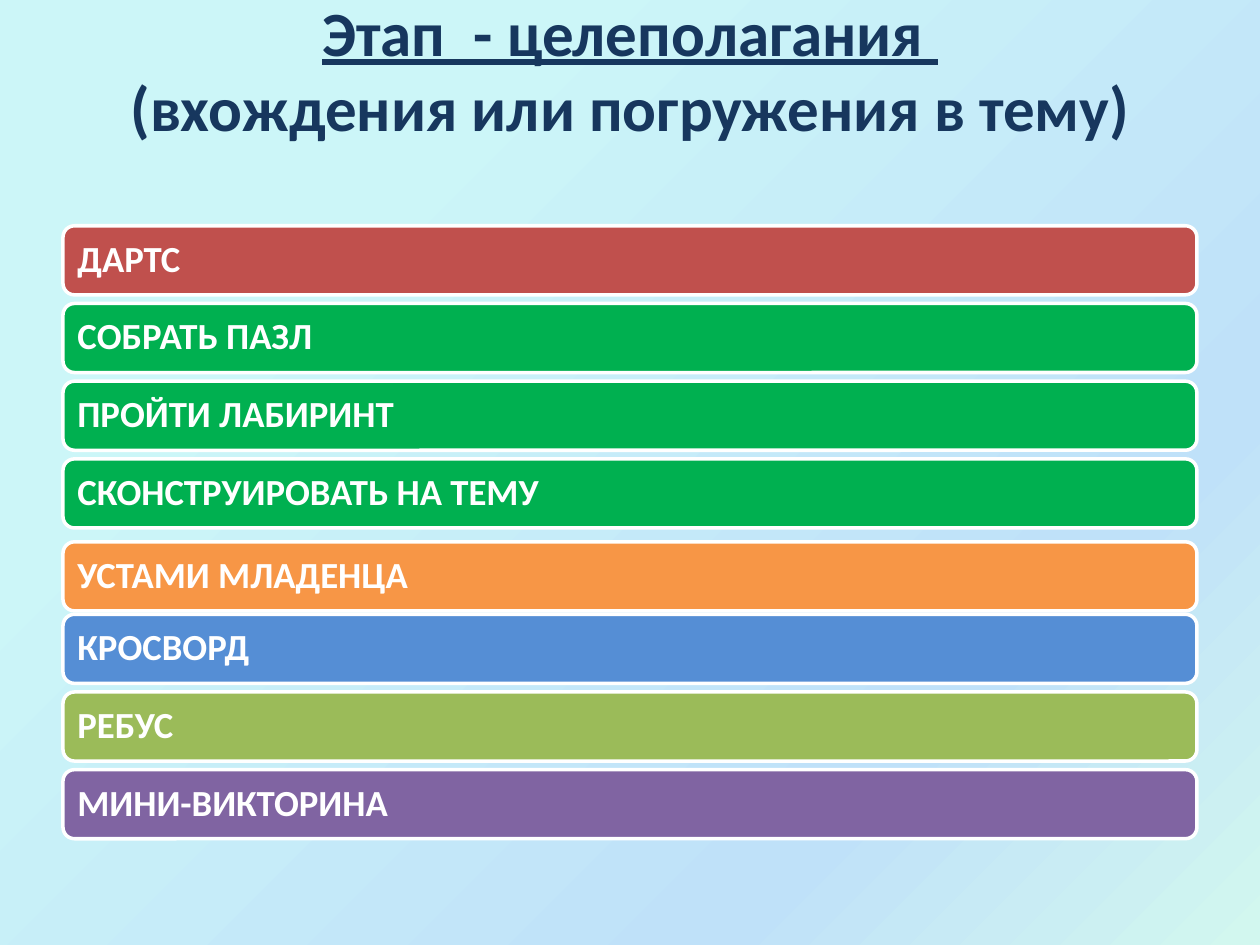
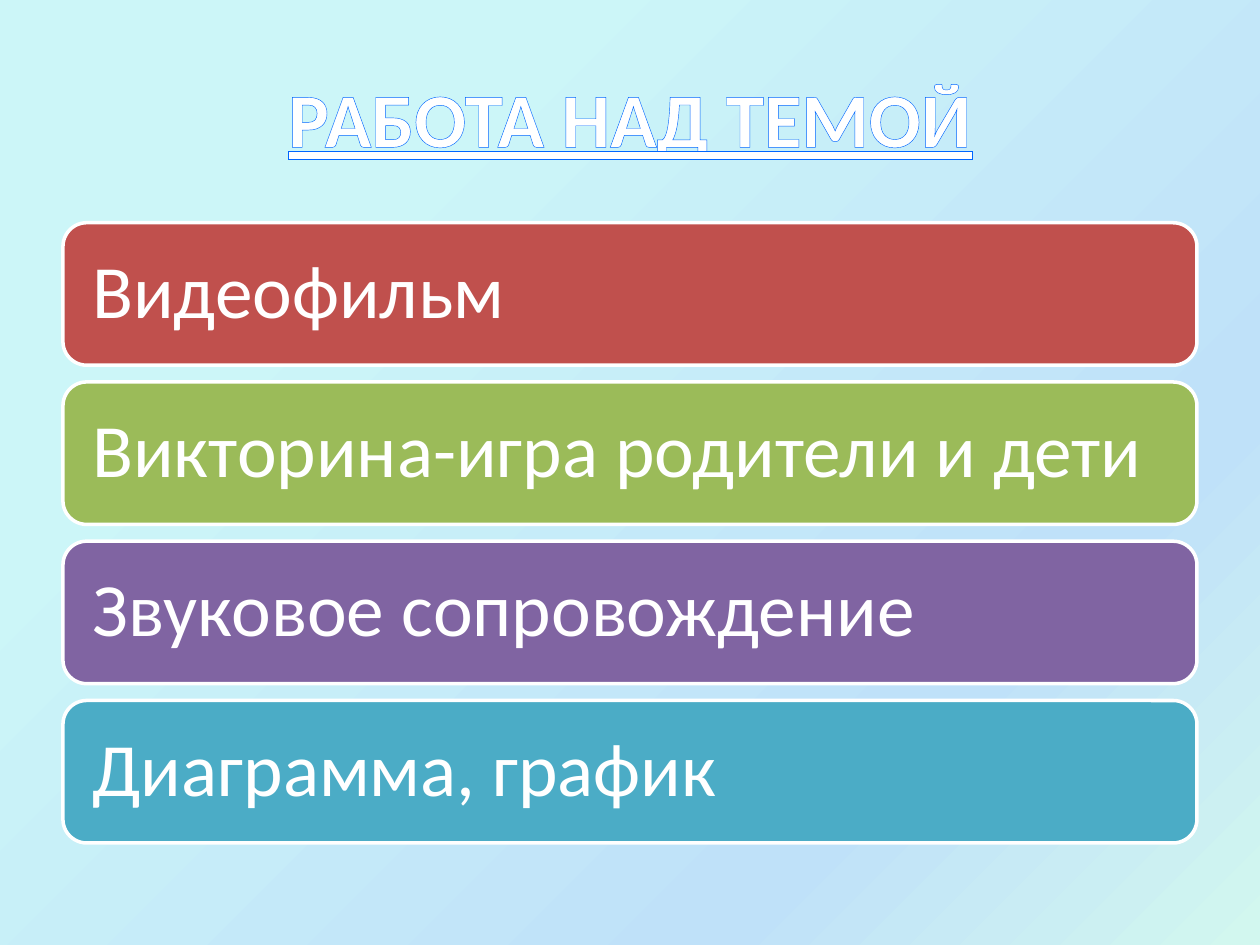
import lxml.etree
import pptx
import pptx.dml.color
import pptx.enum.shapes
import pptx.enum.text
import pptx.oxml.ns
import pptx.util

Pt = pptx.util.Pt
qn = pptx.oxml.ns.qn
MIDDLE = pptx.enum.text.MSO_ANCHOR.MIDDLE
ALIGN = pptx.enum.text.PP_ALIGN

WHITE, NAVY, PALE, AZURE = "FFFFFF", "17375E", "DCE6F2", "0066FF"
RED, GREEN, ORANGE, BLUE = "C0504D", "00B050", "F79646", "558ED5"
OLIVE, PURPLE, TEAL = "9BBB59", "8064A2", "4BACC6"
BACKDROP = [(25, "CCF6F8"), (75, "BFE1F9"), (100, "D2F7EF")]


def rgb(value):
    return pptx.dml.color.RGBColor.from_string(value)


def set_all(obj, values):
    for name, value in values.items():
        setattr(obj, name, value)


def add_solid_fill(parent, color):
    fill = lxml.etree.SubElement(parent, qn("a:solidFill"))
    lxml.etree.SubElement(fill, qn("a:srgbClr"), val=color)


class Deck:
    """Holds the shared style and the slide being filled."""

    font = "Calibri"
    left, width = 36, 648

    def __init__(self):
        self.prs = pptx.Presentation()
        self.prs.slide_width, self.prs.slide_height = Pt(720), Pt(540)
        self.s = None
        self.paint_master()

    def paint_master(self):
        """Give every slide the diagonal gradient."""
        master = self.prs.slide_master
        fill = master.background.fill
        fill.gradient()
        fill.gradient_angle = 315
        stops = next(master.element.iter(qn("a:gsLst")))
        for stop in list(stops):
            stops.remove(stop)
        for pos, color in BACKDROP:
            stop = lxml.etree.SubElement(stops, qn("a:gs"), pos=str(pos * 1000))
            lxml.etree.SubElement(stop, qn("a:srgbClr"), val=color)

    def slide(self):
        self.s = self.prs.slides.add_slide(self.prs.slide_layouts[6])

    def run(self, p, text, size, color, **style):
        r = p.add_run()
        r.text = text
        set_all(r.font, {"name": self.font, "size": Pt(size), **style})
        r.font.color.rgb = rgb(color)
        return r

    def title(self, lines, top, height, size, color, outline):
        """Centre the lines in one paragraph, underlining the first."""
        sp = self.s.shapes.add_textbox(Pt(self.left), Pt(top), Pt(self.width), Pt(height))
        tf = sp.text_frame
        set_all(tf, {"word_wrap": True, "vertical_anchor": MIDDLE})
        p = tf.paragraphs[0]
        p.alignment = ALIGN.CENTER
        for i, line in enumerate(lines):
            if i:
                p.add_line_break()
            r = self.run(p, line, size, color, bold=True, underline=i == 0)
            ln = lxml.etree.Element(qn("a:ln"), w=str(Pt(1.45)))
            add_solid_fill(ln, outline)
            r.font.fill  # the run properties exist from here on
            r._r.get_or_add_rPr().insert(0, ln)

    def bar(self, text, color, top, height, size, bold):
        sp = self.s.shapes.add_shape(
            pptx.enum.shapes.MSO_SHAPE.ROUNDED_RECTANGLE,
            Pt(self.left), Pt(top), Pt(self.width), Pt(height))
        sp.shadow.inherit = False
        sp.fill.solid()
        sp.fill.fore_color.rgb = rgb(color)
        sp.line.color.rgb = rgb(WHITE)
        sp.line.width = Pt(2)
        tf = sp.text_frame
        set_all(tf, {"word_wrap": True, "vertical_anchor": MIDDLE})
        for side in ("left", "top", "right", "bottom"):
            setattr(tf, f"margin_{side}", Pt(size * 0.3))
        p = tf.paragraphs[0]
        set_all(p, {"alignment": ALIGN.LEFT, "line_spacing": 0.9})
        self.run(p, text, size, WHITE, bold=bold)

    def bars(self, items, top, pitch, height, size, bold=False, shifts=None):
        """Stack bars at an even pitch; shifts moves single bars down by index."""
        for i, (text, color) in enumerate(items):
            y = top + i * pitch + (shifts or {}).get(i, 0)
            self.bar(text, color, y, height, size, bold)


def main():
    deck = Deck()

    deck.slide()
    deck.title(["Этап  - целеполагания ", "(вхождения или погружения в тему)"],
               0, 78.5, 36, NAVY, PALE)
    deck.bars([
        ("ДАРТС", RED),
        ("СОБРАТЬ ПАЗЛ", GREEN),
        ("ПРОЙТИ ЛАБИРИНТ", GREEN),
        ("СКОНСТРУИРОВАТЬ НА ТЕМУ", GREEN),
        ("УСТАМИ МЛАДЕНЦА", ORANGE),
        ("КРОСВОРД", BLUE),
        ("РЕБУС", OLIVE),
        ("МИНИ-ВИКТОРИНА", PURPLE),
    ], 129, 44.4, 39.5, 21, bold=True, shifts={4: 3})

    deck.slide()
    deck.title(["РАБОТА НАД ТЕМОЙ"], 21.6, 90, 44, WHITE, AZURE)
    deck.bars([
        ("Видеофильм", RED),
        ("Викторина-игра родители и дети", OLIVE),
        ("Звуковое сопровождение", PURPLE),
        ("Диаграмма, график", TEAL),
    ], 127.3, 91, 81.4, 43)

    deck.prs.save("out.pptx")


if __name__ == "__main__":
    main()
